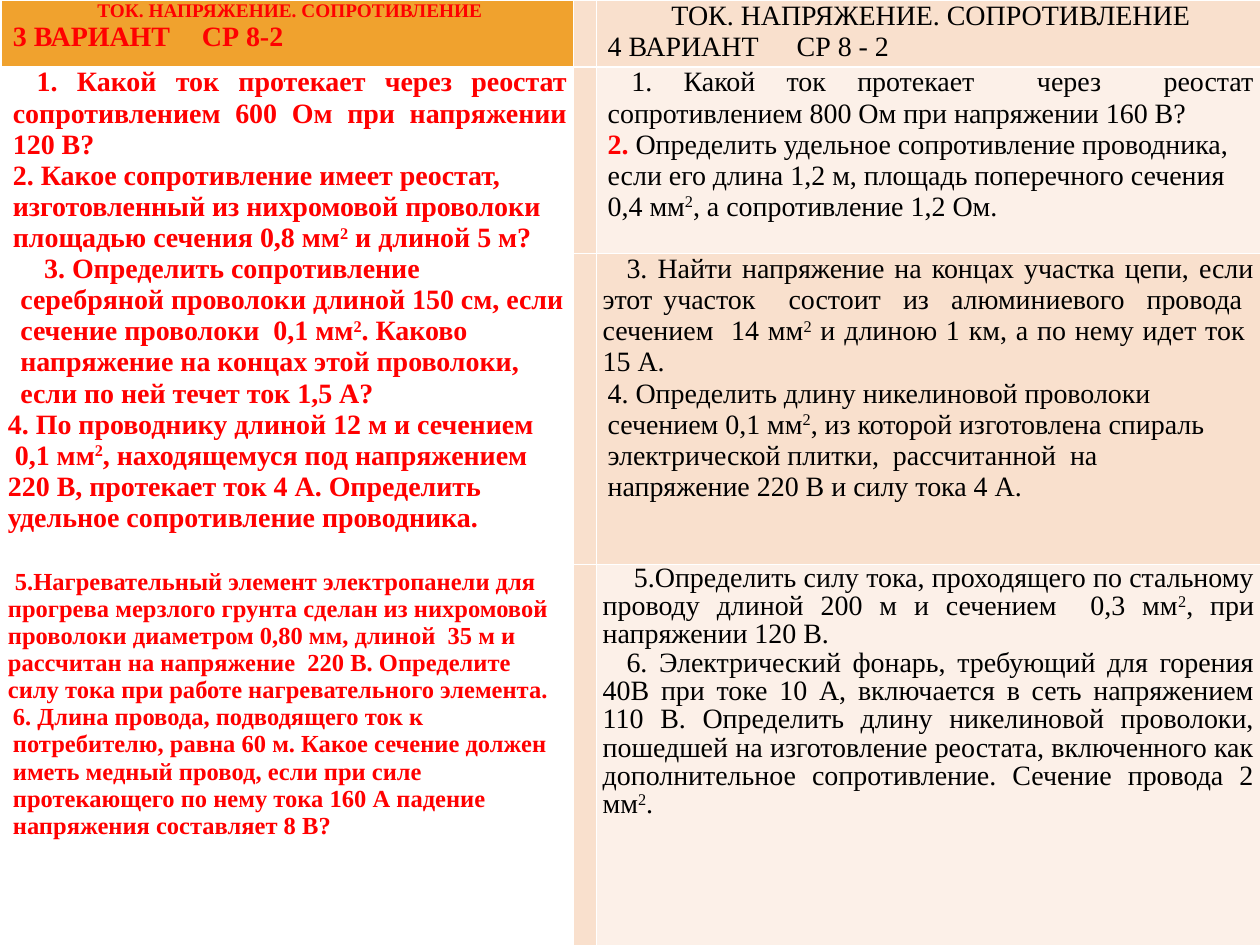
import dataclasses

import lxml.etree
import pptx
import pptx.dml.color
import pptx.enum.text
import pptx.oxml.ns
import pptx.util

Cm = pptx.util.Cm
Pt = pptx.util.Pt
ALIGN = pptx.enum.text.PP_ALIGN
qn = pptx.oxml.ns.qn

COLORS = {
    "red": "FF0000",
    "black": "000000",
    "white": "FFFFFF",
    "orange": "F0A22E",
    "peach": "F9E0CD",
    "cream": "FCF0E8",
}
FONT = "Times New Roman"
COLUMNS = [11.53, 0.46, 13.39]
ROWS = [1.35, 3.35, 6.27, 8.08]
TITLE = "ТОК. НАПРЯЖЕНИЕ. СОПРОТИВЛЕНИЕ"
FIRST = 0.48
INSET = 0.1


@dataclasses.dataclass
class Task:
    text: str
    align: ALIGN = ALIGN.LEFT
    left: float = INSET
    first: float = 0
    size: float = 16
    before: float = 0
    spacing: float = 1
    tab: float = 0
    lead: str = ""


VARIANT_3 = [
    [
        Task(TITLE, ALIGN.CENTER, size=11),
        Task("3 ВАРИАНТ\tСР 8-2", tab=9.05),
    ],
    [
        Task("1. Какой ток протекает через реостат сопротивлением 600 Ом при напряжении 120 В?",
             ALIGN.JUSTIFY, first=FIRST, before=5),
        Task("2. Какое сопротивление имеет реостат, изготовленный из нихромовой проволоки "
             "площадью сечения 0,8 мм^2^ и длиной 5 м?"),
    ],
    [
        Task("3. Определить сопротивление серебряной проволоки длиной 150 см, если сечение "
             "проволоки  0,1 мм^2^. Каково напряжение на концах этой проволоки, если по ней "
             "течет ток 1,5 А?", left=0.25, first=FIRST, before=6),
        Task("4. По проводнику длиной 12 м и сечением", left=0),
        Task("0,1 мм^2^, находящемуся под напряжением 220 В, протекает ток 4 А. Определить "
             "удельное сопротивление проводника.", left=0, first=0.14),
    ],
    [
        Task("5.Нагревательный элемент электропанели для прогрева мерзлого грунта сделан из "
             "нихромовой проволоки диаметром 0,80 мм, длиной  35 м и рассчитан на напряжение  "
             "220 В. Определите силу тока при работе нагревательного элемента.",
             left=0, first=0.14, size=14),
        Task("6. Длина провода, подводящего ток к потребителю, равна 60 м. Какое сечение должен "
             "иметь медный провод, если при силе протекающего по нему тока 160 А падение  "
             "напряжения составляет 8 В?", size=14),
    ],
]

VARIANT_4 = [
    [
        Task(TITLE, ALIGN.CENTER),
        Task("4 ВАРИАНТ\tСР 8 - 2", tab=10.3),
    ],
    [
        Task("1. Какой ток протекает  через  реостат сопротивлением 800 Ом при напряжении 160 В?",
             ALIGN.JUSTIFY, first=FIRST, before=5),
        Task("Определить удельное сопротивление проводника, если его длина 1,2 м, площадь "
             "поперечного сечения 0,4 мм^2^, а сопротивление 1,2 Ом.", lead="2. "),
    ],
    [
        Task("3. Найти напряжение на концах участка цепи, если этот участок   состоит  из  "
             "алюминиевого  провода  сечением  14 мм^2^ и длиною 1 км, а по нему идет ток  15 А.",
             ALIGN.JUSTIFY, left=0, first=FIRST),
        Task("4. Определить длину никелиновой проволоки сечением 0,1 мм^2^, из которой "
             "изготовлена спираль электрической плитки,  рассчитанной  на  напряжение 220 В "
             "и силу тока 4 А."),
    ],
    [
        Task("5.Определить силу тока, проходящего по стальному проводу длиной 200 м и сечением  "
             "0,3 мм^2^, при напряжении 120 В.",
             ALIGN.JUSTIFY, left=0, first=0.63, spacing=0.91),
        Task("6. Электрический фонарь, требующий для горения 40В при токе 10 А, включается в сеть "
             "напряжением 110 В. Определить длину никелиновой проволоки, пошедшей на "
             "изготовление реостата, включенного как дополнительное сопротивление. Сечение "
             "провода 2 мм^2^.", ALIGN.JUSTIFY, left=0, first=FIRST, spacing=0.91),
    ],
]

LEFT_FILLS = ["orange", None, None, None]
RIGHT_FILLS = ["peach", "cream", "peach", "cream"]


def rgb(name):
    return pptx.dml.color.RGBColor.from_string(COLORS[name])


def style_cell(cell, fill):
    cell.margin_left = cell.margin_right = Cm(0.13)
    cell.margin_top = cell.margin_bottom = 0
    properties = cell._tc.get_or_add_tcPr()
    for side in ("lnL", "lnR", "lnT", "lnB"):
        line = lxml.etree.SubElement(properties, qn("a:" + side), w=str(Pt(1)))
        solid = lxml.etree.SubElement(line, qn("a:solidFill"))
        lxml.etree.SubElement(solid, qn("a:srgbClr"), val=COLORS["white"])
    if fill:
        cell.fill.solid()
        cell.fill.fore_color.rgb = rgb(fill)
    else:
        cell.fill.background()


def set_layout(para, task):
    para.alignment = task.align
    para.line_spacing = task.spacing
    para.space_before = Pt(task.before)
    properties = para._p.get_or_add_pPr()
    properties.set("marL", str(Cm(task.left)))
    properties.set("indent", str(Cm(task.first)))
    if task.tab:
        tabs = lxml.etree.SubElement(properties, qn("a:tabLst"))
        lxml.etree.SubElement(tabs, qn("a:tab"), pos=str(Cm(task.tab)), algn="l")


def write_task(para, task, color, bold):
    set_layout(para, task)
    para.font.name = FONT
    para.font.size = Pt(task.size)
    para.font.bold = bold
    para.font.color.rgb = rgb(color)
    if task.lead:
        span = para.add_run()
        span.text = task.lead
        span.font.bold = True
        span.font.color.rgb = rgb("red")
    for index, piece in enumerate(task.text.split("^")):
        span = para.add_run()
        span.text = piece
        if index % 2:
            span.font._element.set("baseline", "30000")


def write_cell(cell, tasks, color, bold):
    frame = cell.text_frame
    for index, task in enumerate(tasks):
        para = frame.add_paragraph() if index else frame.paragraphs[0]
        write_task(para, task, color, bold)


def add_task_table(page):
    table = page.shapes.add_table(len(ROWS), len(COLUMNS), Cm(0.03), 0,
                                  Cm(sum(COLUMNS)), Cm(sum(ROWS))).table
    table.first_row = table.horz_banding = False
    for column, width in zip(table.columns, COLUMNS):
        column.width = Cm(width)
    for index, height in enumerate(ROWS):
        table.rows[index].height = Cm(height)
        left, gap, right = table.rows[index].cells
        style_cell(left, LEFT_FILLS[index])
        style_cell(gap, "peach")
        style_cell(right, RIGHT_FILLS[index])
        write_cell(left, VARIANT_3[index], "red", True)
        write_cell(right, VARIANT_4[index], "black", False)
    table.cell(3, 0).margin_top = Cm(0.08)


def main():
    deck = pptx.Presentation()
    deck.slide_width = Cm(25.4)
    deck.slide_height = Cm(19.05)
    page = deck.slides.add_slide(deck.slide_layouts[6])
    add_task_table(page)
    deck.save("out.pptx")


if __name__ == "__main__":
    main()
